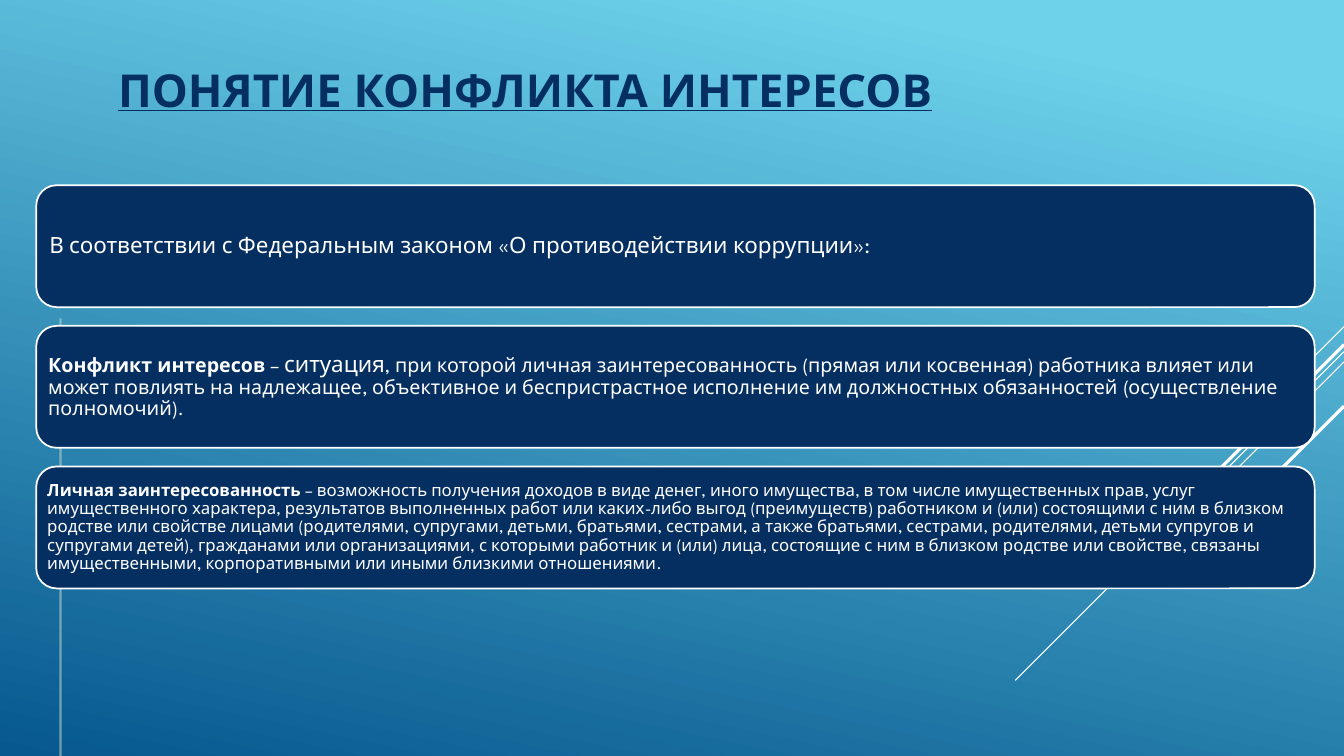
from dataclasses import dataclass

from lxml import etree
from pptx import Presentation
from pptx.dml.color import RGBColor
from pptx.enum.shapes import MSO_CONNECTOR, MSO_SHAPE
from pptx.enum.text import MSO_ANCHOR, PP_ALIGN
from pptx.oxml.ns import qn
from pptx.util import Inches, Pt

STRAIGHT = MSO_CONNECTOR.STRAIGHT
ROUND = MSO_SHAPE.ROUNDED_RECTANGLE
MIDDLE, TOP = MSO_ANCHOR.MIDDLE, MSO_ANCHOR.TOP
LEFT = PP_ALIGN.LEFT
WIDE, HIGH = Inches(13.33), Inches(7.5)


@dataclass(frozen=True)
class Theme:
    font: str = "League Spartan"
    navy: RGBColor = RGBColor(0x05, 0x2F, 0x61)
    white: RGBColor = RGBColor(0xFF, 0xFF, 0xFF)
    pale: RGBColor = RGBColor(0xBA, 0xD0, 0xCB)
    sky: RGBColor = RGBColor(0x6E, 0xD2, 0xEB)
    deep: RGBColor = RGBColor(0x06, 0x58, 0x8E)
    title: float = 32.4
    large: int = 16
    medium: int = 14
    small: int = 12


THEME = Theme()


@dataclass(frozen=True)
class Phrase:
    text: str
    size: float
    bold: bool = False


@dataclass(frozen=True)
class Card:
    inset: float
    phrases: tuple[Phrase, ...]


@dataclass(frozen=True)
class Ray:
    """A diagonal from the right edge; lengths in percent of slide height."""
    top: float
    run: float
    width: float


RAYS = (
    Ray(43.2, 13.33, 0.75),
    Ray(46.53, 43.47, 0.75),
    Ray(47.87, 27.6, 0.75),
    Ray(45.6, 25.47, 2.25),
    Ray(53.73, 18.53, 2.25),
)

CARDS = (
    Card(0.07, (
        Phrase("В соответствии с Федеральным законом «О противодействии коррупции»:",
               THEME.large),
    )),
    Card(0.06, (
        Phrase("Конфликт интересов ", THEME.medium, True),
        Phrase("– ", THEME.medium),
        Phrase("ситуация", THEME.large),
        Phrase(", при которой личная заинтересованность (прямая или косвенная) работника "
               "влияет или может повлиять на надлежащее, объективное и беспристрастное "
               "исполнение им должностных обязанностей (осуществление полномочий).",
               THEME.medium),
    )),
    Card(0.05, (
        Phrase("Личная заинтересованность ", THEME.small, True),
        Phrase("– возможность получения доходов в виде денег, иного имущества, в том числе "
               "имущественных прав, услуг имущественного характера, результатов выполненных "
               "работ или каких-либо выгод (преимуществ) работником и (или) состоящими с ним "
               "в близком родстве или свойстве лицами (родителями, супругами, детьми, "
               "братьями, сестрами, а также братьями, сестрами, родителями, детьми супругов "
               "и супругами детей), гражданами или организациями, с которыми работник и (или) "
               "лица, состоящие с ним в близком родстве или свойстве, связаны имущественными, "
               "корпоративными или иными близкими отношениями.", THEME.small),
    )),
)
# Card grid in percent of the slide
CARD_X, CARD_Y, CARD_W, CARD_H, PITCH = 2.7, 24.5, 95.12, 16.13, 18.6


def across(share: float) -> int:
    return round(WIDE * share / 100)


def down(share: float) -> int:
    return round(HIGH * share / 100)


def style(run, size: float, color: RGBColor, bold: bool) -> None:
    run.font.name = THEME.font
    run.font.size = Pt(size)
    run.font.bold = bold
    run.font.color.rgb = color


def pad(frame, inset: float) -> None:
    frame.margin_left = frame.margin_right = Inches(inset)
    frame.margin_top = frame.margin_bottom = Inches(inset)


def add_line(slide, start: tuple[int, int], end: tuple[int, int],
             color: RGBColor, width: float):
    line = slide.shapes.add_connector(STRAIGHT, *start, *end)
    line.line.color.rgb = color
    line.line.width = Pt(width)
    etree.SubElement(line._element.spPr, qn("a:effectLst"))
    return line


def add_ray(slide, ray: Ray) -> None:
    run = down(ray.run)
    add_line(slide, (WIDE, down(ray.top)), (WIDE - run, down(ray.top) + run),
             THEME.white, ray.width)


def add_card(slide, row: int, card: Card) -> None:
    box = slide.shapes.add_shape(ROUND, across(CARD_X), down(CARD_Y + row * PITCH),
                                 across(CARD_W), down(CARD_H))
    box.shadow.inherit = False
    box.fill.solid()
    box.fill.fore_color.rgb = THEME.navy
    box.line.color.rgb = THEME.white
    box.line.width = Pt(1.25)
    frame = box.text_frame
    frame.word_wrap = True
    frame.vertical_anchor = MIDDLE
    pad(frame, card.inset)
    para = frame.paragraphs[0]
    para.alignment = LEFT
    para.line_spacing = 0.9
    for phrase in card.phrases:
        run = para.add_run()
        run.text = phrase.text
        style(run, phrase.size, THEME.white, phrase.bold)


def set_title(slide, text: str) -> None:
    title = slide.shapes.title
    title.left, title.top = across(8.03), down(9.07)
    title.width, title.height = across(70), down(13.47)
    frame = title.text_frame
    frame.text = text
    frame.word_wrap = True
    frame.vertical_anchor = TOP
    pad(frame, 0)
    frame.margin_left = Inches(0.1)
    para = frame.paragraphs[0]
    para.alignment = LEFT
    para.line_spacing = 0.9
    style(para.runs[0], THEME.title, THEME.navy, True)
    para.runs[0].font.underline = True


def set_back(slide) -> None:
    fill = slide.background.fill
    fill.gradient()
    fill.gradient_angle = 258
    stops = ((0.1, THEME.sky), (1, THEME.deep))
    for stop, (place, color) in zip(fill.gradient_stops, stops):
        stop.position = place
        stop.color.rgb = color


def main() -> None:
    deck = Presentation()
    deck.slide_width, deck.slide_height = WIDE, HIGH
    slide = deck.slides.add_slide(deck.slide_layouts[5])

    # Backdrop and diagonals
    set_back(slide)
    for ray in RAYS:
        add_ray(slide, ray)

    # Heading
    set_title(slide, "ПОНЯТИЕ КОНФЛИКТА ИНТЕРЕСОВ")

    # Translucent rail behind the cards
    rail = add_line(slide, (across(4.5), down(42.13)), (across(4.5), HIGH), THEME.pale, 1.5)
    tint = rail._element.spPr.find(".//" + qn("a:srgbClr"))
    etree.SubElement(tint, qn("a:alpha"), val="60000")

    # Definitions
    for row, card in enumerate(CARDS):
        add_card(slide, row, card)

    deck.save("out.pptx")


if __name__ == "__main__":
    main()
